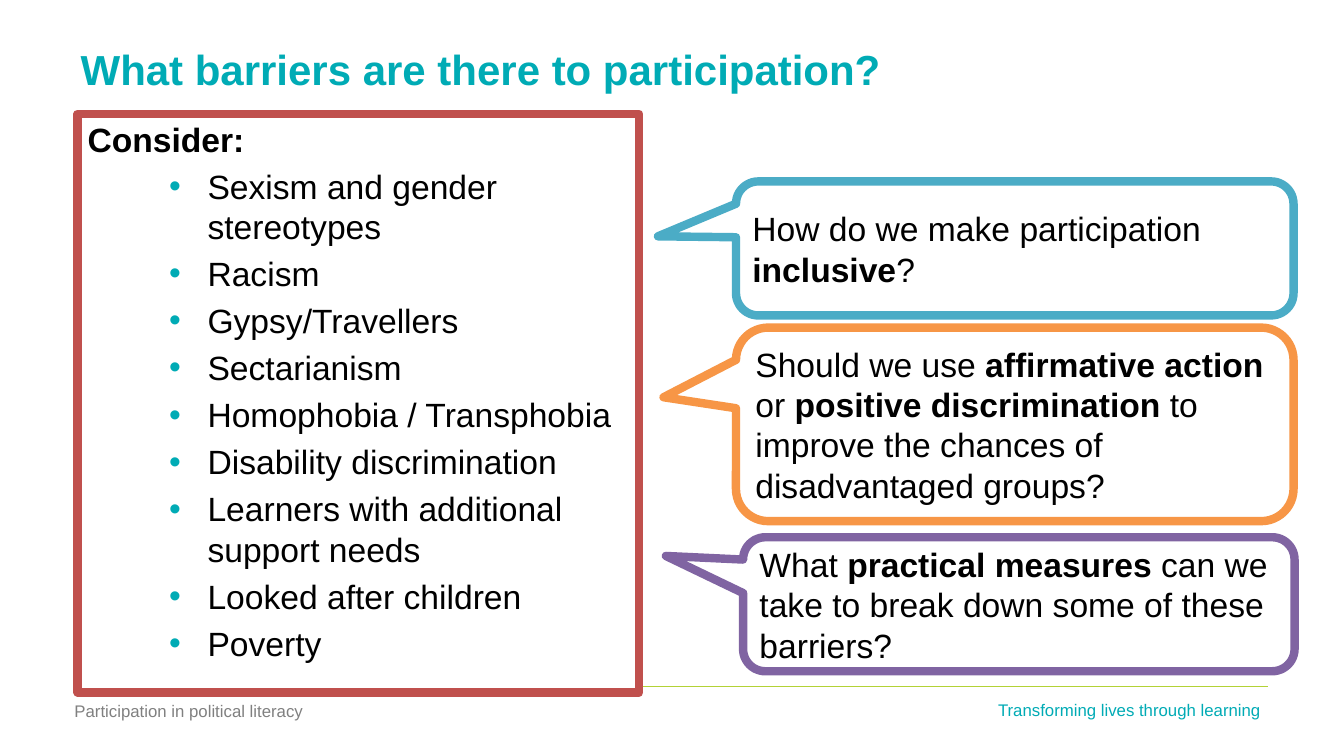
from lxml import etree
from pptx import Presentation
from pptx import util as u
from pptx.dml.color import RGBColor
from pptx.enum import shapes, text
from pptx.oxml.ns import qn

PX = 9144  # 100 px to the inch
FONT = "Arial"
TEAL, BLACK, WHITE, GREY = "00ABB5", "000000", "FFFFFF", "808080"
LIME, RED, BLUE, ORANGE, PURPLE = "B3D236", "C0504D", "4BACC6", "F79646", "8064A2"

BARRIERS = [
    "Sexism and gender stereotypes", "Racism", "Gypsy/Travellers",
    "Sectarianism", "Homophobia / Transphobia", "Disability discrimination",
    "Learners with additional support needs", "Looked after children", "Poverty",
]

# box, pointer tip, outline colour, runs (text, bold)
QUESTIONS = [
    ((730, 180, 553, 133), (-0.64, -0.09), BLUE,
     [("How do we make participation ", False), ("inclusive", True), ("?", False)]),
    ((730, 325, 553, 192), (-0.63, -0.14), ORANGE,
     [("Should we use ", False), ("affirmative action ", True), ("or ", False),
      ("positive discrimination ", True),
      ("to improve the chances of disadvantaged groups?", False)]),
    ((737, 533, 547, 133), (-0.64, -0.36), PURPLE,
     [("What ", False), ("practical measures ", True),
      ("can we take to break down some of these barriers?", False)]),
]


def px(*lengths):
    return [u.Emu(length * PX) for length in lengths]


def color(hex_string):
    return RGBColor.from_string(hex_string)


def add_run(paragraph, words, size, hex_color, bold=False):
    paragraph.alignment = text.PP_ALIGN.LEFT
    run = paragraph.add_run()
    run.text = words
    run.font.name = FONT
    run.font.size = u.Pt(size)
    run.font.bold = bold
    run.font.color.rgb = color(hex_color)


def outline(shape, hex_color):
    """Give a white fill and a thick line with round joins."""
    shape.fill.solid()
    shape.fill.fore_color.rgb = color(WHITE)
    shape.line.color.rgb = color(hex_color)
    shape.line.width = u.Pt(6)
    etree.SubElement(shape.line._get_or_add_ln(), qn("a:round"))


def add_bullet(paragraph):
    properties = paragraph._p.get_or_add_pPr()
    properties.set("marL", str(119 * PX))
    properties.set("indent", str(-38 * PX))
    bullet_color = etree.SubElement(properties, qn("a:buClr"))
    etree.SubElement(bullet_color, qn("a:srgbClr"), val=TEAL)
    etree.SubElement(properties, qn("a:buFont"), typeface=FONT)
    etree.SubElement(properties, qn("a:buChar"), char="•")


def add_title(slide, words):
    title = slide.shapes.title
    title.left, title.top, title.width, title.height = px(70, 29, 1185, 78)
    frame = title.text_frame
    frame.vertical_anchor = text.MSO_ANCHOR.MIDDLE
    add_run(frame.paragraphs[0], words, 30, TEAL, True)


def add_text(slide, box):
    textbox = slide.shapes.add_textbox(*px(*box))
    textbox.text_frame.word_wrap = True
    return textbox


def add_footer(slide, box, words, hex_color):
    frame = add_text(slide, box).text_frame
    add_run(frame.paragraphs[0], words, 12, hex_color)


def add_rule(slide):
    rule = slide.shapes.add_connector(
        shapes.MSO_CONNECTOR.STRAIGHT, *px(73, 681, 1258, 681))
    rule.line.color.rgb = color(LIME)
    rule.line.width = u.Pt(0.75)
    etree.SubElement(rule._element.spPr, qn("a:effectLst"))


def add_barriers(slide):
    panel = add_text(slide, (77, 113, 557, 574))
    outline(panel, RED)
    frame = panel.text_frame
    add_run(frame.paragraphs[0], "Consider:", 24, BLACK, True)
    for barrier in BARRIERS:
        paragraph = frame.add_paragraph()
        paragraph.level = 1
        paragraph.space_before = u.Pt(4.8)
        add_bullet(paragraph)
        add_run(paragraph, barrier, 24, BLACK)


def add_question(slide, box, tip, hex_color, runs):
    callout = slide.shapes.add_shape(
        shapes.MSO_SHAPE.ROUNDED_RECTANGULAR_CALLOUT, *px(*box))
    callout.shadow.inherit = False
    callout.adjustments[0], callout.adjustments[1] = tip
    outline(callout, hex_color)
    frame = callout.text_frame
    frame.word_wrap = True
    frame.vertical_anchor = text.MSO_ANCHOR.MIDDLE
    for words, bold in runs:
        add_run(frame.paragraphs[0], words, 24, BLACK, bold)


def main():
    presentation = Presentation()
    presentation.slide_width, presentation.slide_height = px(1333, 750)
    slide = presentation.slides.add_slide(presentation.slide_layouts[5])
    add_rule(slide)
    add_footer(slide, (64, 690, 301, 30), "Participation in political literacy", GREY)
    add_footer(slide, (980, 689, 301, 30), "Transforming lives through learning", TEAL)
    add_title(slide, "What barriers are there to participation?")
    add_barriers(slide)
    for question in QUESTIONS:
        add_question(slide, *question)
    presentation.save("out.pptx")


if __name__ == "__main__":
    main()
